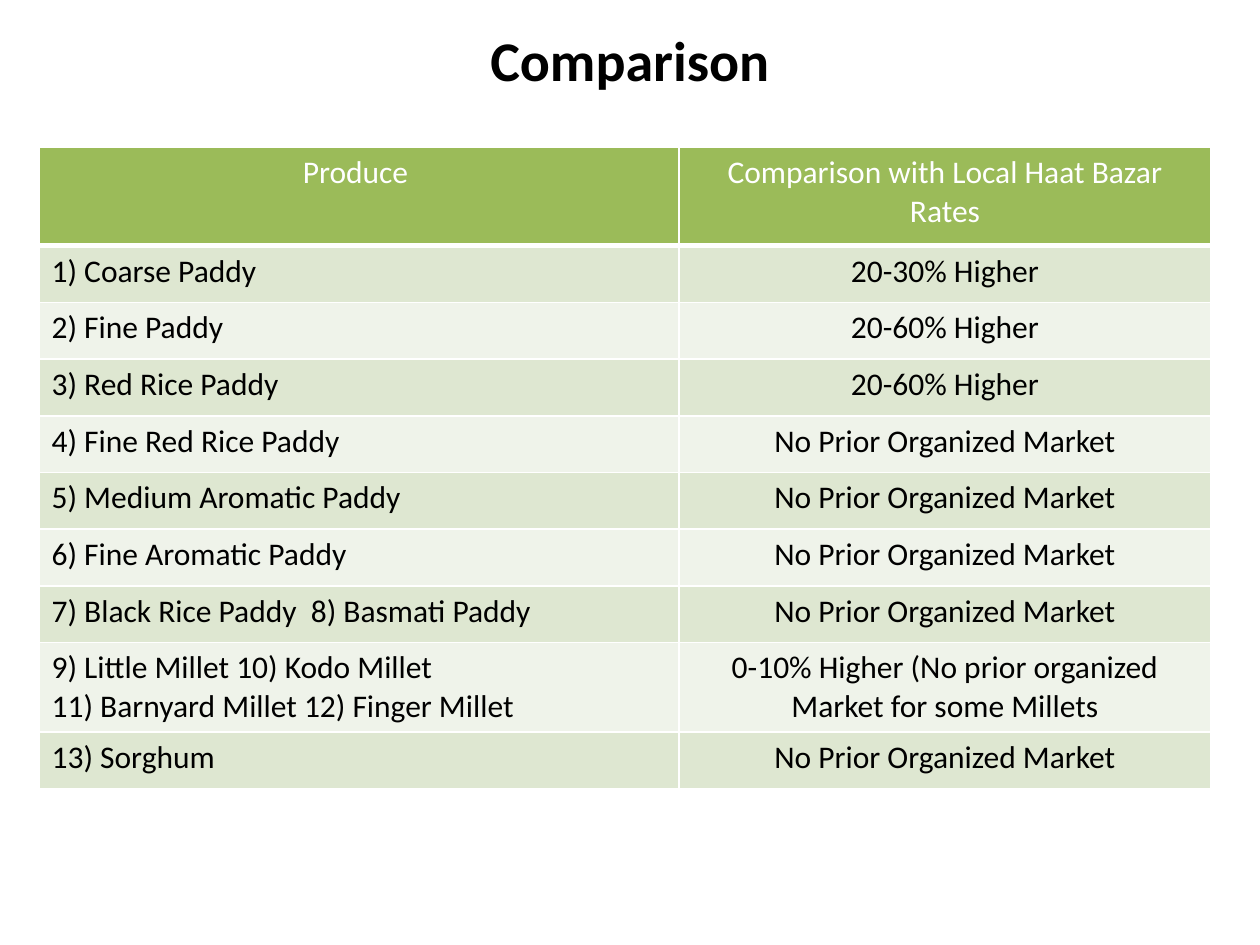
from lxml import etree
from pptx import Presentation
from pptx import util as u
from pptx.dml.color import RGBColor
from pptx.enum import text
from pptx.oxml import ns

COLORS = {"ink": "000000", "paper": "FFFFFF", "header": "9BBB59",
          "odd": "DEE7D1", "even": "EFF3EA"}
NO_MARKET = "No Prior Organized Market"
HEADINGS = ("Produce ", "Comparison with Local Haat Bazar Rates")
RATES = [
    ("1) Coarse Paddy", "20-30% Higher"),
    ("2) Fine Paddy", "20-60% Higher"),
    ("3) Red Rice Paddy", "20-60% Higher"),
    ("4) Fine Red Rice Paddy", NO_MARKET),
    ("5) Medium Aromatic Paddy", NO_MARKET),
    ("6) Fine Aromatic Paddy", NO_MARKET),
    ("7) Black Rice Paddy  8) Basmati Paddy", NO_MARKET),
    ("9) Little Millet 10) Kodo Millet\n11) Barnyard Millet 12) Finger Millet",
     "0-10% Higher (No prior organized Market for some Millets"),
    ("13) Sorghum", NO_MARKET),
]
COLUMN_WIDTHS = (5.08, 4.22)
HEADER_HEIGHT, ROW_HEIGHT, TALL_ROW_HEIGHT = 0.78, 0.45, 0.71


class SlideBuilder:
    """Holds the style and the current slide."""
    font = "Calibri"

    def __init__(self, presentation, layout_index):
        self.width = presentation.slide_width
        self.height = presentation.slide_height
        self.slide = presentation.slides.add_slide(
            presentation.slide_layouts[layout_index])

    def box(self, left, top, width, height):
        """Turn shares of the slide's size into lengths."""
        return (int(left * self.width), int(top * self.height),
                int(width * self.width), int(height * self.height))

    def set_text(self, frame, words, color, align, **font_format):
        frame.text = words
        for paragraph in frame.paragraphs:
            paragraph.alignment = align
            for run in paragraph.runs:
                for name, value in {"name": self.font, **font_format}.items():
                    setattr(run.font, name, value)
                run.font.color.rgb = RGBColor.from_string(COLORS[color])

    def title(self, words, left, top, width, height):
        shape = self.slide.shapes.title
        shape.left, shape.top, shape.width, shape.height = self.box(
            left, top, width, height)
        shape.text_frame.vertical_anchor = text.MSO_ANCHOR.MIDDLE
        self.set_text(shape.text_frame, words, "ink", text.PP_ALIGN.CENTER,
                      size=u.Pt(32), bold=True)

    def borders(self, cell, bottom):
        """Draw white cell edges, one point wide except for the bottom."""
        properties = cell._tc.get_or_add_tcPr()
        for index, (side, points) in enumerate(
                (("L", 1), ("R", 1), ("T", 1), ("B", bottom))):
            line = etree.Element(ns.qn(f"a:ln{side}"), w=str(u.Pt(points)))
            fill = etree.SubElement(line, ns.qn("a:solidFill"))
            etree.SubElement(fill, ns.qn("a:srgbClr"), val=COLORS["paper"])
            properties.insert(index, line)

    def table(self, rows, column_widths, row_heights, left, top, width, height):
        frame = self.slide.shapes.add_table(
            len(rows), len(column_widths), *self.box(left, top, width, height))
        table = frame.table
        for column, inches in zip(table.columns, column_widths):
            column.width = u.Inches(inches)
        for row, inches in zip(table.rows, row_heights):
            row.height = u.Inches(inches)
        for r, values in enumerate(rows):
            is_header = r == 0
            fill = "header" if is_header else ("even", "odd")[r % 2]
            for c, words in enumerate(values):
                cell = table.cell(r, c)
                centred = is_header or c == 1
                self.set_text(
                    cell.text_frame, words, "paper" if is_header else "ink",
                    text.PP_ALIGN.CENTER if centred else text.PP_ALIGN.LEFT,
                    size=u.Pt(18), bold=False)
                cell.fill.solid()
                cell.fill.fore_color.rgb = RGBColor.from_string(COLORS[fill])
                self.borders(cell, bottom=3 if is_header else 1)


def main():
    presentation = Presentation()
    presentation.slide_width = u.Inches(10)
    presentation.slide_height = u.Inches(7.5)
    builder = SlideBuilder(presentation, layout_index=5)

    heights = [HEADER_HEIGHT] + [
        TALL_ROW_HEIGHT if "\n" in produce else ROW_HEIGHT for produce, _ in RATES]
    builder.table([HEADINGS, *RATES], COLUMN_WIDTHS, heights,
                  left=0.31 / 10, top=1.17 / 7.5,
                  width=sum(COLUMN_WIDTHS) / 10, height=sum(heights) / 7.5)
    builder.title("Comparison", left=0.05, top=0.08 / 7.5,
                  width=0.9, height=0.78 / 7.5)
    presentation.save("out.pptx")


if __name__ == "__main__":
    main()
